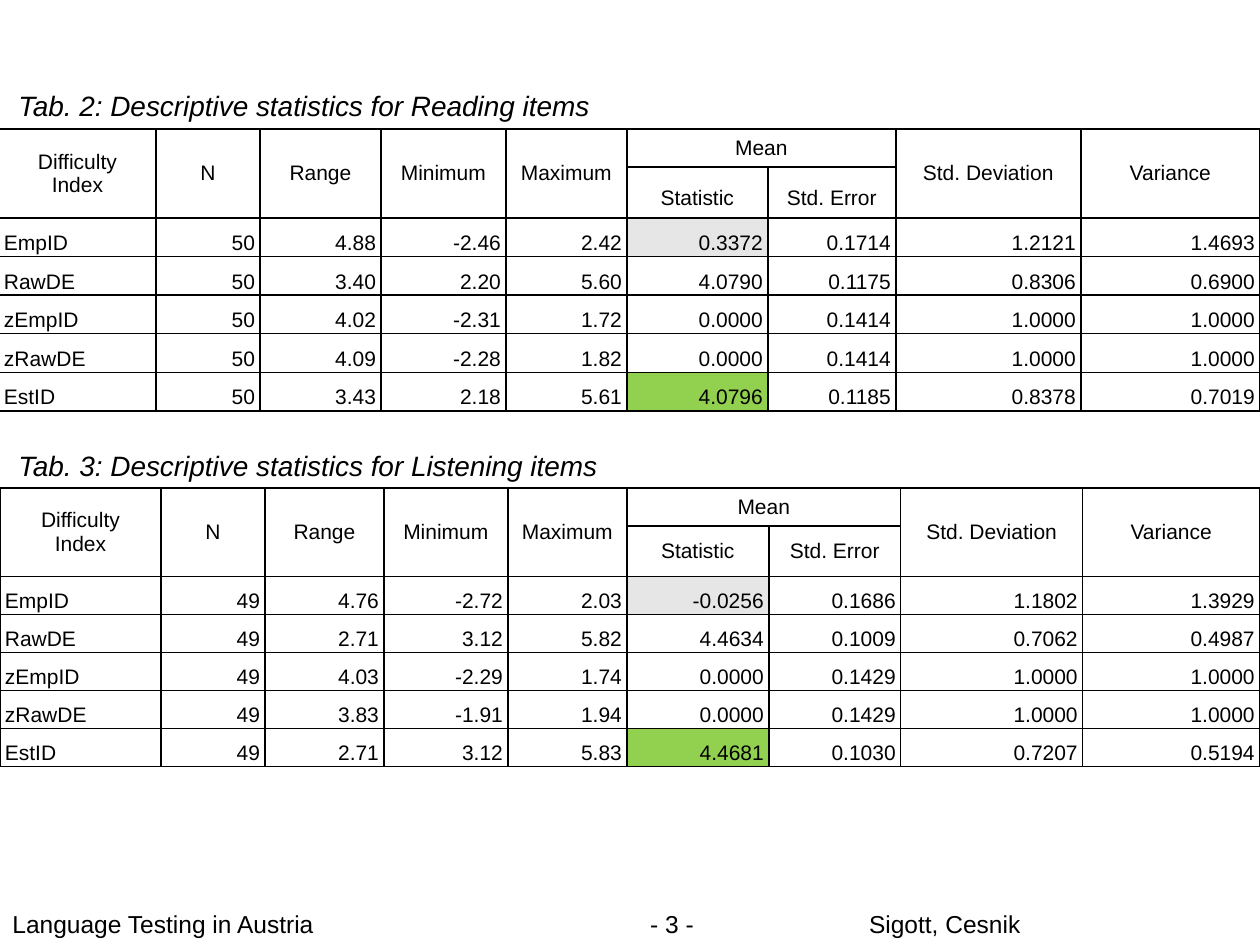
"""Build the slide with descriptive statistics for reading and listening items."""
from lxml import etree
from pptx import Presentation
from pptx.dml.color import RGBColor
from pptx.enum.text import MSO_ANCHOR, PP_ALIGN
from pptx.oxml.ns import qn
from pptx.util import Emu, Pt

LEFT, CENTER, RIGHT = PP_ALIGN.LEFT, PP_ALIGN.CENTER, PP_ALIGN.RIGHT
MIDDLE = MSO_ANCHOR.MIDDLE
BLACK = RGBColor(0x00, 0x00, 0x00)
GRAY = RGBColor(0xE6, 0xE6, 0xE6)
GREEN = RGBColor(0x92, 0xD0, 0x50)
PX = 914400 // 126
FONT = "Arial"

HEADINGS = ["Difficulty\nIndex", "N", "Range", "Minimum", "Maximum", "Mean", "",
            "Std. Deviation", "Variance"]
MEAN_COLUMN = HEADINGS.index("Mean")
SUBHEADINGS = [""] * MEAN_COLUMN + ["Statistic", "Std. Error", "", ""]
HIGHLIGHTS = {"EmpID": GRAY, "EstID": GREEN}

STATISTICS = [
    {
        "caption": ("Tab. 2: Descriptive statistics for Reading items", 6, 82, 609, 47),
        "origin": (-1, 129),
        "columns": [157, 104, 121, 125, 121, 141, 128, 185, 179],
        "header_heights": [38, 51],
        "body_height": 193,
        "subheading_spacing": 1.5,
        "items": [
            ["EmpID", "50", "4.88", "-2.46", "2.42", "0.3372", "0.1714", "1.2121", "1.4693"],
            ["RawDE", "50", "3.40", "2.20", "5.60", "4.0790", "0.1175", "0.8306", "0.6900"],
            ["zEmpID", "50", "4.02", "-2.31", "1.72", "0.0000", "0.1414", "1.0000", "1.0000"],
            ["zRawDE", "50", "4.09", "-2.28", "1.82", "0.0000", "0.1414", "1.0000", "1.0000"],
            ["EstID", "50", "3.43", "2.18", "5.61", "4.0796", "0.1185", "0.8378", "0.7019"],
        ],
    },
    {
        "caption": ("Tab. 3: Descriptive statistics for Listening items", 6, 442, 612, 47),
        "origin": (0, 488),
        "columns": [161, 104, 119, 124, 119, 142, 132, 182, 177],
        "header_heights": [38, 50],
        "body_height": 190,
        "subheading_spacing": 1,
        "items": [
            ["EmpID", "49", "4.76", "-2.72", "2.03", "-0.0256", "0.1686", "1.1802", "1.3929"],
            ["RawDE", "49", "2.71", "3.12", "5.82", "4.4634", "0.1009", "0.7062", "0.4987"],
            ["zEmpID", "49", "4.03", "-2.29", "1.74", "0.0000", "0.1429", "1.0000", "1.0000"],
            ["zRawDE", "49", "3.83", "-1.91", "1.94", "0.0000", "0.1429", "1.0000", "1.0000"],
            ["EstID", "49", "2.71", "3.12", "5.83", "4.4681", "0.1030", "0.7207", "0.5194"],
        ],
    },
]
FOOTERS = [
    (("Sigott, Cesnik", 819, 903, 214, 42), RIGHT),
    (("Language Testing in Austria", 0, 903, 599, 42), LEFT),
    (("- 3 -", 609, 903, 126, 42), CENTER),
]
CELL_FORMAT = {"margin_left": Emu(5 * PX), "margin_right": Emu(5 * PX),
               "margin_top": 0, "margin_bottom": 0, "vertical_anchor": MIDDLE}
TABLE_FLAGS = {"first_row": False, "horz_banding": False}


def apply(target, settings):
    for name, value in settings.items():
        setattr(target, name, value)


def style_text(frame, size, align, spacing=1, italic=False):
    for paragraph in frame.paragraphs:
        apply(paragraph, {"alignment": align, "line_spacing": spacing})
        for run in paragraph.runs:
            apply(run.font, {"name": FONT, "size": Pt(size), "italic": italic})
            run.font.color.rgb = BLACK


def add_label(slide, label, size, align, italic=False):
    text, *box = label
    frame = slide.shapes.add_textbox(*(Emu(length * PX) for length in box)).text_frame
    frame.word_wrap = True
    frame.text = text
    style_text(frame, size, align, italic=italic)


def add_borders(cell):
    properties = cell._tc.get_or_add_tcPr()
    for side in ("lnL", "lnR", "lnT", "lnB"):
        line = etree.SubElement(properties, qn(f"a:{side}"), w=str(Pt(1)))
        fill = etree.SubElement(line, qn("a:solidFill"))
        etree.SubElement(fill, qn("a:srgbClr"), val=str(BLACK))


def add_statistics(slide, stats):
    rows = [HEADINGS, SUBHEADINGS] + stats["items"]
    item_height = stats["body_height"] * PX // len(stats["items"])
    heights = [height * PX for height in stats["header_heights"]]
    heights += [item_height] * len(stats["items"])
    widths = [width * PX for width in stats["columns"]]
    left, top = (offset * PX for offset in stats["origin"])
    table = slide.shapes.add_table(len(rows), len(widths), left, top,
                                   sum(widths), sum(heights)).table
    apply(table, TABLE_FLAGS)
    for column, width in zip(table.columns, widths):
        column.width = width
    for row, height in zip(table.rows, heights):
        row.height = height

    spacings = [1, stats["subheading_spacing"]] + [1.5] * len(stats["items"])
    for r, values in enumerate(rows):
        for c, value in enumerate(values):
            cell = table.cell(r, c)
            cell.text = value
            apply(cell, CELL_FORMAT)
            align = CENTER if r < 2 else RIGHT if c else LEFT
            style_text(cell.text_frame, 12, align, spacings[r])
            add_borders(cell)
            if c == MEAN_COLUMN and values[0] in HIGHLIGHTS:
                cell.fill.solid()
                cell.fill.fore_color.rgb = HIGHLIGHTS[values[0]]
            else:
                cell.fill.background()

    table.cell(0, MEAN_COLUMN).merge(table.cell(0, MEAN_COLUMN + 1))
    for c, subheading in enumerate(SUBHEADINGS):
        if not subheading:
            table.cell(0, c).merge(table.cell(1, c))


def main():
    presentation = Presentation()
    apply(presentation, {"slide_width": Emu(1260 * PX), "slide_height": Emu(945 * PX)})
    slide = presentation.slides.add_slide(presentation.slide_layouts[6])
    for footer, align in FOOTERS:
        add_label(slide, footer, 14, align)
    for stats in STATISTICS:
        add_statistics(slide, stats)
    for stats in STATISTICS:
        add_label(slide, stats["caption"], 16, LEFT, italic=True)
    presentation.save("out.pptx")


if __name__ == "__main__":
    main()
